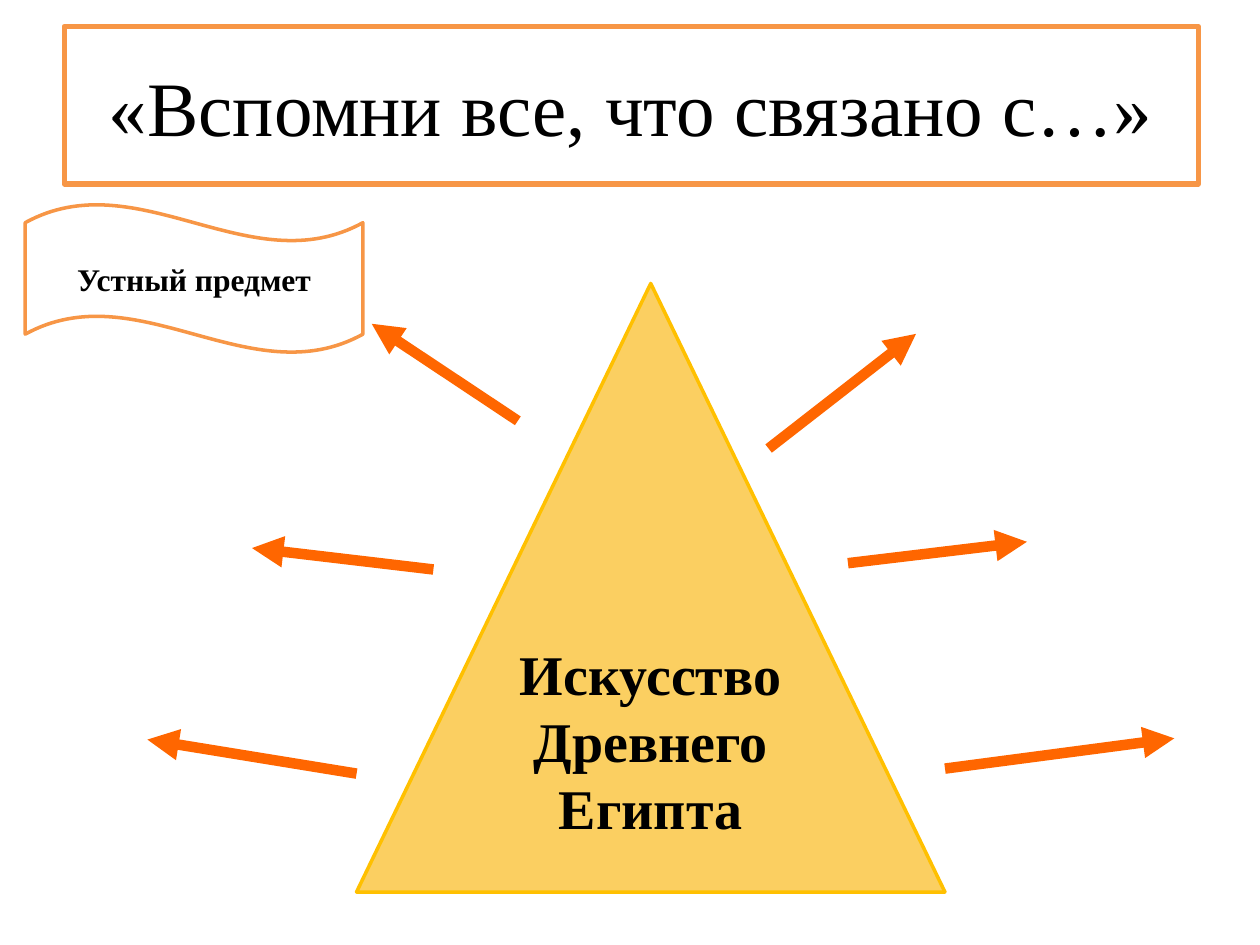
"""Build a recall slide: a pyramid topic with arrows leading outwards."""
from lxml import etree
from pptx import Presentation
from pptx.dml.color import RGBColor
from pptx.enum.shapes import MSO_CONNECTOR, MSO_SHAPE
from pptx.enum.text import MSO_ANCHOR, PP_ALIGN
from pptx.oxml.ns import qn
from pptx.util import Inches, Pt

RECT = MSO_SHAPE.RECTANGLE
PEAK = MSO_SHAPE.FLOWCHART_EXTRACT
WAVE = MSO_SHAPE.WAVE
LINE = MSO_CONNECTOR.STRAIGHT
MID = MSO_ANCHOR.MIDDLE
MIDDLE = PP_ALIGN.CENTER


def paint(target, color):
    target.solid()
    target.fore_color.rgb = RGBColor.from_string(color)


deck = Presentation()
deck.slide_width, deck.slide_height = Inches(10), Inches(7.5)
slide = deck.slides.add_slide(deck.slide_layouts[6])

shapes = [
    (RECT, (0.51, 0.21, 9, 1.25), "FFFFFF", "F79646", 3,
     "«Вспомни все, что связано с…»", {"size": Pt(44), "bold": False}),
    (PEAK, (2.83, 2.25, 4.67, 4.83), "FBCF61", "FFC000", 2,
     "Искусство Древнего Египта", {"size": Pt(32), "bold": True}),
    (WAVE, (0.2, 1.62, 2.68, 1.18), "FFFFFF", "F79646", 2,
     "Устный предмет", {"size": Pt(18), "bold": True}),
]
for kind, box, fill, edge, width, text, style in shapes:
    shape = slide.shapes.add_shape(kind, *map(Inches, box))
    shape.shadow.inherit = False
    paint(shape.fill, fill)
    paint(shape.line.fill, edge)
    shape.line.width = Pt(width)
    frame = shape.text_frame
    frame.word_wrap = True
    frame.vertical_anchor = MID
    para = frame.paragraphs[0]
    para.alignment = MIDDLE
    run = para.add_run()
    run.text = text
    for name, value in {"name": "Times New Roman", **style}.items():
        setattr(run.font, name, value)
    paint(run.font.fill, "000000")

arrows = [
    (6.1, 3.56, 7.27, 2.65),
    (6.73, 4.47, 8.15, 4.3),
    (7.5, 6.1, 9.32, 5.86),
    (4.11, 3.34, 2.95, 2.57),
    (3.44, 4.52, 2, 4.35),
    (2.83, 6.14, 1.17, 5.87),
]
for ends in arrows:
    arrow = slide.shapes.add_connector(LINE, *map(Inches, ends))
    paint(arrow.line.fill, "FF6600")
    arrow.line.width = Pt(6)
    props = arrow.line._get_or_add_ln()
    etree.SubElement(props, qn("a:tailEnd"), type="triangle")
    etree.SubElement(props.getparent(), qn("a:effectLst"))

deck.save("out.pptx")
